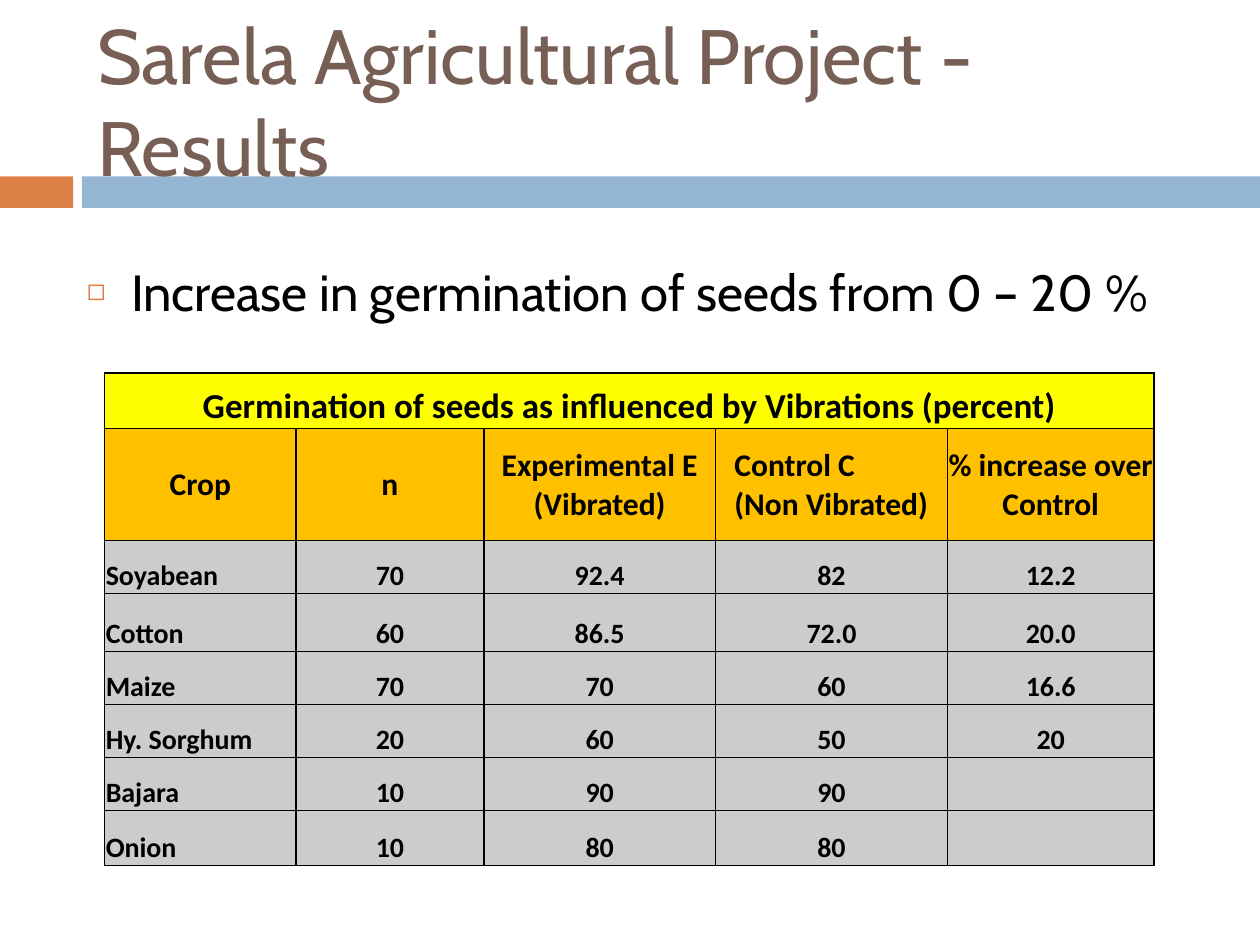
"""Build the seed germination results slide with its title bars, bullet and table."""
from lxml import etree
from pptx import Presentation
from pptx import util as u
from pptx.dml.color import RGBColor
from pptx.enum import shapes, text
from pptx.oxml import ns

COLORS = {
    "title": "775F55", "text": "000000", "orange": "DD8047", "blue": "94B6D2",
    "caption": "FFFF00", "header": "FFC000", "body": "CCCCCC",
}
CAPTION = "Germination of seeds as influenced by Vibrations (percent)"
ROWS = [
    [CAPTION, "", "", "", ""],
    ["Crop", "n", "Experimental E (Vibrated)", "Control C\v(Non Vibrated)", "% increase over Control"],
    ["Soyabean", "70", "92.4", "82", "12.2"],
    ["Cotton", "60", "86.5", "72.0", "20.0"],
    ["Maize", "70", "70", "60", "16.6"],
    ["Hy. Sorghum", "20", "60", "50", "20"],
    ["Bajara", "10", "90", "90", ""],
    ["Onion", "10", "80", "80", ""],
]
COLUMN_WIDTHS = [1.52, 1.49, 1.84, 1.84, 1.64]
ROW_HEIGHTS = [0.44, 0.89, 0.42, 0.46, 0.42, 0.42, 0.42, 0.44]
ROW_STYLES = [("caption", 20), ("header", 18)] + [("body", 16)] * 6


def style_font(font, name, size, color, bold=False):
    font.name, font.size, font.bold = name, u.Pt(size), bold
    font.color.rgb = RGBColor.from_string(COLORS[color])


def add_element(parent, tag, position=None, **attributes):
    element = etree.Element(ns.qn(tag), attributes)
    parent.insert(len(parent) if position is None else position, element)
    return element


presentation = Presentation()
presentation.slide_width, presentation.slide_height = u.Inches(10), u.Inches(7.5)
slide = presentation.slides.add_slide(presentation.slide_layouts[1])
title, body = slide.placeholders

bars = [(0, 0.58, "orange"), (0.65, 9.35, "blue")]
for order, (left, width, color) in enumerate(bars):
    bar = slide.shapes.add_shape(
        shapes.MSO_SHAPE.RECTANGLE, u.Inches(left), u.Inches(1.4), u.Inches(width), u.Inches(0.25))
    bar.shadow.inherit = False
    bar.fill.solid()
    bar.fill.fore_color.rgb = RGBColor.from_string(COLORS[color])
    bar.line.fill.background()
    slide.shapes._spTree.insert(2 + order, bar._element)

placeholders = [
    (title, (0.67, 0.25, 8.92, 1.08), "Sarela Agricultural Project - Results", 44, "title",
     text.MSO_ANCHOR.MIDDLE),
    (body, (0.59, 2.02, 8.92, 0.74), "Increase in germination of seeds from 0 – 20 %", 29, "text",
     text.MSO_ANCHOR.TOP),
]
for shape, box, words, size, color, anchor in placeholders:
    shape.left, shape.top, shape.width, shape.height = map(u.Inches, box)
    frame = shape.text_frame
    frame.text = words
    frame.auto_size = text.MSO_AUTO_SIZE.NONE
    frame.vertical_anchor = anchor
    frame.paragraphs[0].alignment = text.PP_ALIGN.LEFT
    style_font(frame.paragraphs[0].runs[0].font, "Cabin", size, color)

paragraph = body.text_frame.paragraphs[0]
paragraph.space_before = u.Pt(7)
properties = paragraph._p.get_or_add_pPr()
properties.set("marL", str(u.Inches(0.35)))
properties.set("indent", str(-u.Inches(0.35)))
add_element(add_element(properties, "a:buClr"), "a:srgbClr", val=COLORS["orange"])
add_element(properties, "a:buSzPct", val="60000")
add_element(properties, "a:buChar", char="◻")

table = slide.shapes.add_table(
    len(ROWS), len(COLUMN_WIDTHS), u.Inches(0.83), u.Inches(2.96),
    u.Inches(sum(COLUMN_WIDTHS)), u.Inches(sum(ROW_HEIGHTS))).table
table.first_row = table.horz_banding = False
for column, width in zip(table.columns, COLUMN_WIDTHS):
    column.width = u.Inches(width)
for row, height in zip(table.rows, ROW_HEIGHTS):
    row.height = u.Inches(height)
table.cell(0, 0).merge(table.cell(0, len(COLUMN_WIDTHS) - 1))

for row_index, (values, (fill, size)) in enumerate(zip(ROWS, ROW_STYLES)):
    top = 1 if row_index <= 2 else 0.5
    bottom = 1 if row_index < 2 else 0.5
    for column_index, value in enumerate(values):
        cell = table.cell(row_index, column_index)
        cell.text_frame.text = value
        cell.margin_left = cell.margin_right = u.Inches(0 if fill == "header" else 0.01)
        cell.margin_top = u.Inches(0.01)
        cell.margin_bottom = 0
        cell.vertical_anchor = text.MSO_ANCHOR.MIDDLE if fill == "header" else text.MSO_ANCHOR.BOTTOM
        paragraph = cell.text_frame.paragraphs[0]
        paragraph.alignment = text.PP_ALIGN.CENTER
        if fill == "body" and column_index == 0:
            paragraph.alignment = text.PP_ALIGN.LEFT
        if "\v" in value:
            paragraph.alignment = text.PP_ALIGN.LEFT
            cell.margin_left = u.Inches(0.15)
        for run in paragraph.runs:
            style_font(run.font, "Calibri", size, "text", bold=True)
        cell.fill.solid()
        cell.fill.fore_color.rgb = RGBColor.from_string(COLORS[fill])
        borders = [("a:lnL", 1), ("a:lnR", 1), ("a:lnT", top), ("a:lnB", bottom)]
        for position, (tag, points) in enumerate(borders):
            line = add_element(cell._tc.get_or_add_tcPr(), tag, position, w=str(u.Pt(points)))
            add_element(add_element(line, "a:solidFill"), "a:srgbClr", val=COLORS["text"])

presentation.save("out.pptx")
